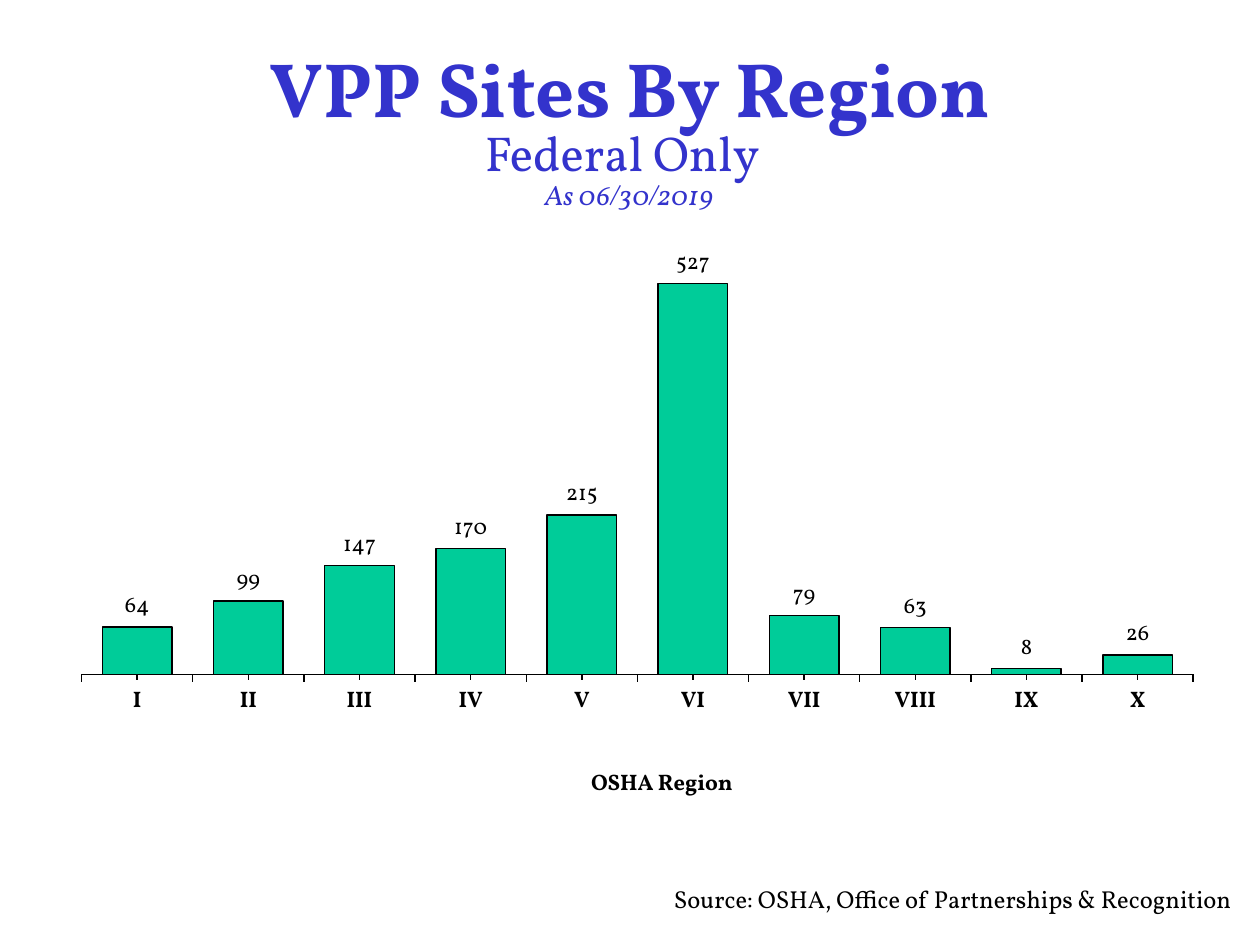
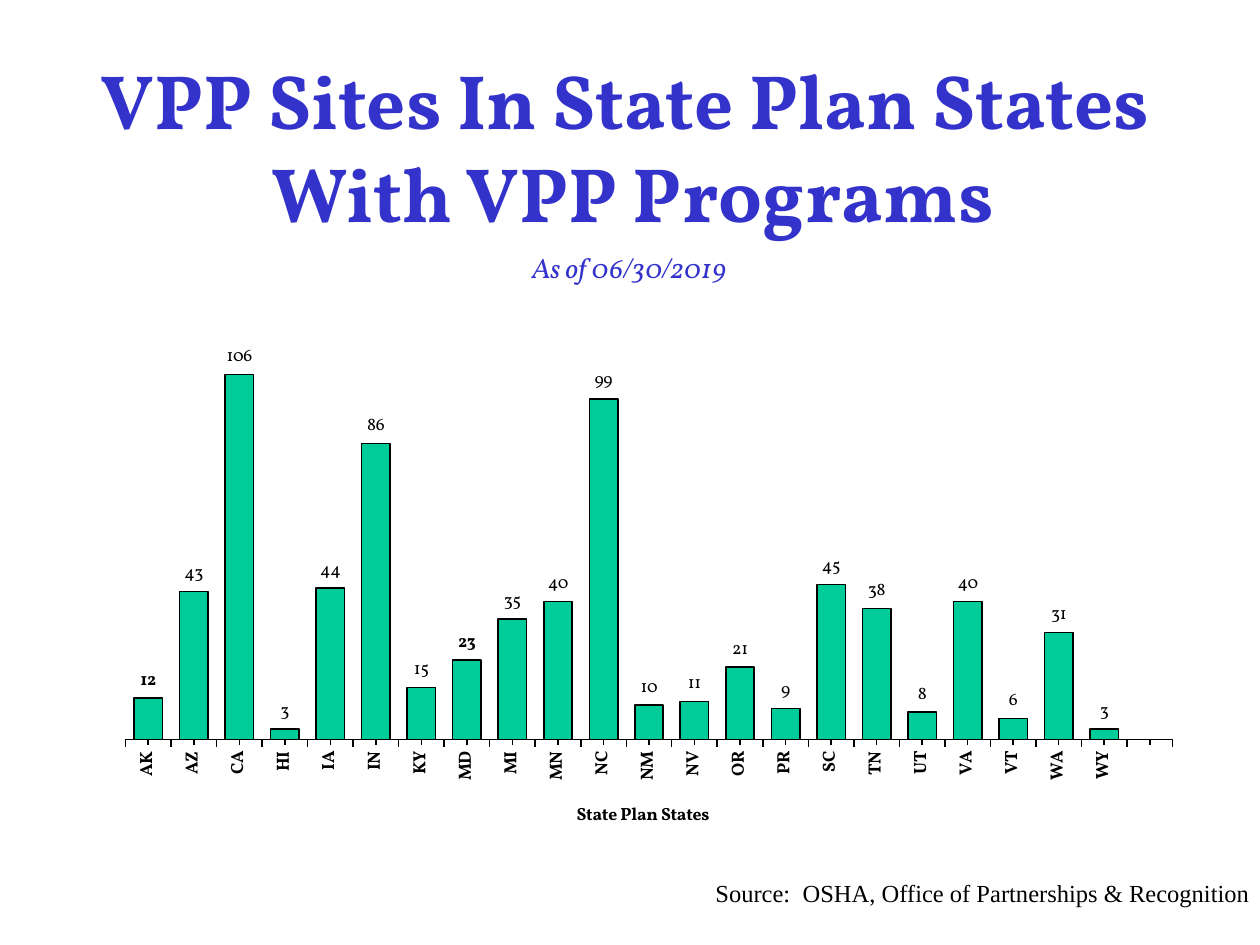
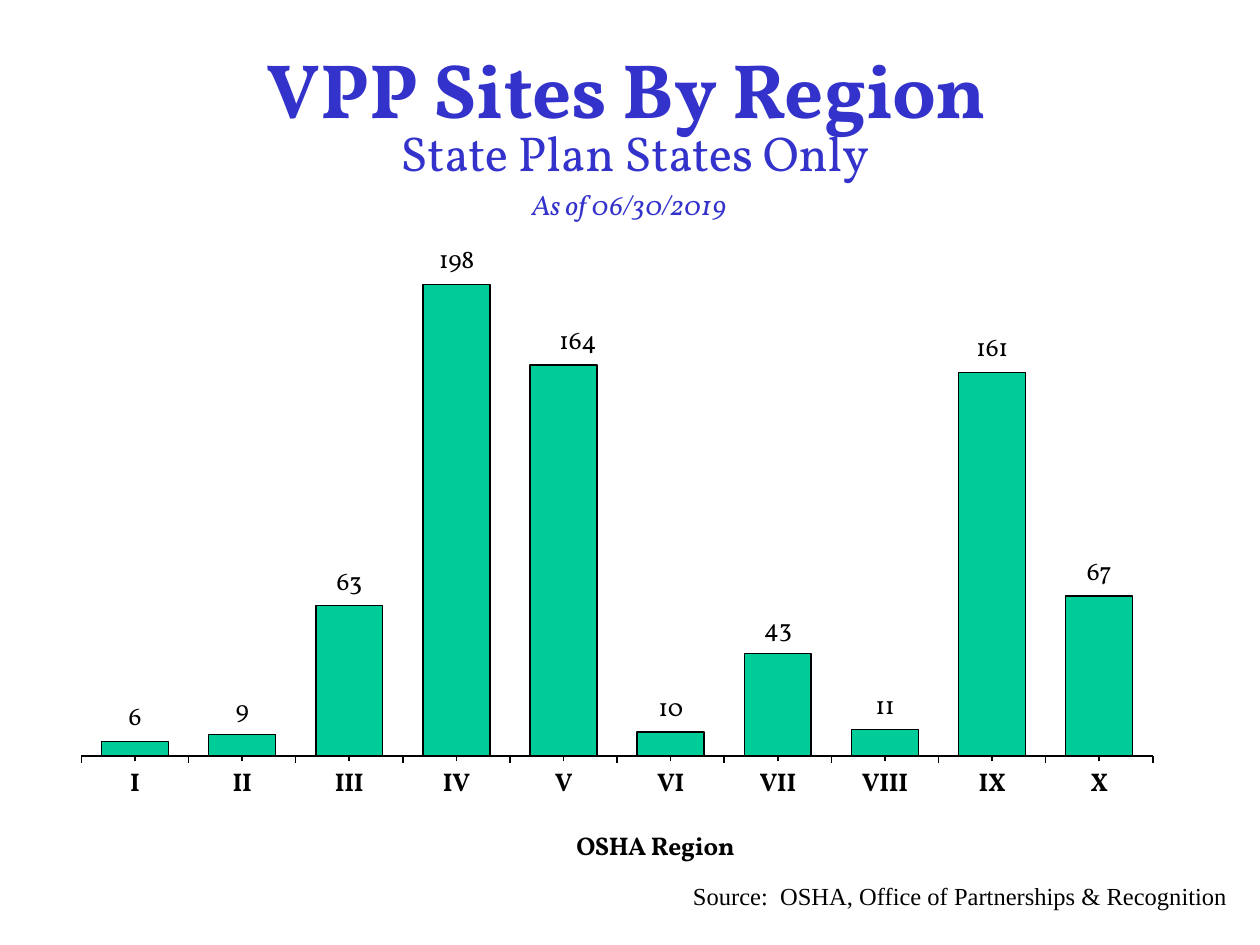
from dataclasses import dataclass, field

from lxml import etree
from pptx import Presentation
from pptx import util as u
from pptx.chart.data import CategoryChartData
from pptx.dml.color import RGBColor
from pptx.enum import chart as charts, text
from pptx.oxml.ns import qn

WIDTH, HEIGHT = u.Inches(10), u.Inches(7.5)
COLUMNS, ROWS = 40, 30


@dataclass(frozen=True)
class Theme:
    heading: RGBColor = RGBColor(0x33, 0x33, 0xCC)
    ink: RGBColor = RGBColor(0, 0, 0)
    bar: RGBColor = RGBColor(0x00, 0xCC, 0x99)
    paper: RGBColor = RGBColor(0xFF, 0xFF, 0xFF)
    face: str = "Vollkorn"
    plain_face: str = "Times New Roman"
    title_size: float = 44
    subtitle_size: float = 28
    date_size: float = 16
    source_size: float = 14


THEME = Theme()


@dataclass(frozen=True)
class Box:
    """A region in columns and rows of the slide grid."""
    left: float
    top: float
    width: float
    height: float

    def inner(self, left, top, width, height):
        return Box(self.left + left, self.top + top, width, height)

    def lengths(self):
        column, row = WIDTH / COLUMNS, HEIGHT / ROWS
        return (u.Emu(round(self.left * column)), u.Emu(round(self.top * row)),
                u.Emu(round(self.width * column)), u.Emu(round(self.height * row)))


@dataclass(frozen=True)
class BarData:
    """Bar values with the chart's own settings; layouts are percentages."""
    title: str
    values: dict
    maximum: float
    size: float
    line: float
    plot: tuple
    title_at: tuple
    upright: bool = False
    bold_labels: tuple = ()
    label_shifts: dict = field(default_factory=dict)


def style(font, size, color, face=THEME.face, bold=False, italic=False):
    font.size, font.name = u.Pt(size), face
    font.bold, font.italic = bold, italic
    font.color.rgb = color


def add_text(page, box, lines, size, color, face=THEME.face, bold=False, italic=False,
             align=text.PP_ALIGN.LEFT, anchor=text.MSO_ANCHOR.TOP, inset=0, wrap=True):
    frame = page.shapes.add_textbox(*box.lengths()).text_frame
    frame.word_wrap = wrap
    if not wrap:
        frame.auto_size = text.MSO_AUTO_SIZE.SHAPE_TO_FIT_TEXT
    frame.vertical_anchor = anchor
    frame.margin_left = frame.margin_right = u.Inches(inset)
    frame.margin_top = frame.margin_bottom = u.Inches(inset / 2)
    for number, line in enumerate(lines):
        para = frame.add_paragraph() if number else frame.paragraphs[0]
        para.alignment = align
        span = para.add_run()
        span.text = line
        style(span.font, size, color, face, bold, italic)


def add_heading(page, box, lines, date, date_top, subtitle="", subtitle_box=None):
    """Title across the box; date and subtitle placed from its top."""
    add_text(page, box, lines, THEME.title_size, THEME.heading, bold=True,
             align=text.PP_ALIGN.CENTER)
    if subtitle:
        add_text(page, box.inner(*subtitle_box), [subtitle], THEME.subtitle_size,
                 THEME.heading, inset=0.1, wrap=False)
    date_left = 14.32 - box.left
    add_text(page, box.inner(date_left, date_top, 11.32, 3), [date], THEME.date_size,
             THEME.heading, italic=True, align=text.PP_ALIGN.CENTER,
             anchor=text.MSO_ANCHOR.MIDDLE, inset=0.1)


def add_source(page, box, line, **options):
    add_text(page, box, [line], THEME.source_size, THEME.ink, **options)


def set_layout(owner, index, settings):
    """Give a chart part a manual layout as its child at index."""
    for old in owner.findall(qn("c:layout")):
        owner.remove(old)
    layout = etree.Element(qn("c:layout"))
    manual = etree.SubElement(layout, qn("c:manualLayout"))
    for tag, value in settings.items():
        etree.SubElement(manual, qn(f"c:{tag}")).set("val", str(value))
    owner.insert(index, layout)


def shares(names, percentages):
    return {name: round(value / 100, 4) for name, value in zip(names, percentages)}


def format_axes(chart, bars):
    values = chart.value_axis
    values.minimum_scale, values.maximum_scale = 0, bars.maximum
    values.has_major_gridlines = False
    values.visible = False

    regions = chart.category_axis
    regions.major_tick_mark = regions.minor_tick_mark = charts.XL_TICK_MARK.OUTSIDE
    regions.tick_label_position = charts.XL_TICK_LABEL_POSITION.LOW
    regions.format.line.color.rgb = THEME.ink
    regions.format.line.width = u.Pt(bars.line)
    style(regions.tick_labels.font, bars.size, THEME.ink, bold=True)
    if bars.upright:
        body = regions._element.find(qn("c:txPr")).find(qn("a:bodyPr"))
        body.set("rot", "-5400000")
        body.set("vert", "horz")

    span = regions.axis_title.text_frame.paragraphs[0].add_run()
    span.text = bars.title
    style(span.font, bars.size, THEME.ink, bold=True)
    set_layout(regions.axis_title._element, 1,
               {"xMode": "edge", "yMode": "edge", **shares("xy", bars.title_at)})


def format_bars(plot, bars):
    plot.gap_width = 60
    plot.vary_by_categories = False
    series = plot.series[0]
    series.format.fill.solid()
    series.format.fill.fore_color.rgb = THEME.bar
    series.format.line.color.rgb = THEME.ink
    series.format.line.width = u.Pt(bars.line)

    labels = series.data_labels
    labels.show_value = True
    labels.position = charts.XL_LABEL_POSITION.OUTSIDE_END
    style(labels.font, bars.size, THEME.ink)
    for index in {*bars.bold_labels, *bars.label_shifts}:
        label = series.points[index].data_label
        style(label.font, bars.size, THEME.ink, bold=index in bars.bold_labels)
        label.position = charts.XL_LABEL_POSITION.OUTSIDE_END
        if index in bars.label_shifts:
            set_layout(label._dLbl, 1, shares("xy", (bars.label_shifts[index], 0)))


def add_bar_chart(page, box, bars):
    data = CategoryChartData()
    data.categories = list(bars.values)
    data.add_series("Series 1", list(bars.values.values()))
    chart = page.shapes.add_chart(charts.XL_CHART_TYPE.COLUMN_CLUSTERED,
                                  *box.lengths(), data).chart
    chart.has_legend = chart.has_title = False
    style(chart.font, bars.size, THEME.ink)
    format_axes(chart, bars)
    format_bars(chart.plots[0], bars)
    set_layout(chart._chartSpace.chart.plotArea, 0,
               {"layoutTarget": "inner", "xMode": "edge", "yMode": "edge",
                **shares("xywh", bars.plot)})


def add_page(deck):
    page = deck.slides.add_slide(deck.slide_layouts[6])
    page.background.fill.solid()
    page.background.fill.fore_color.rgb = THEME.paper
    return page


REGIONS = ("I", "II", "III", "IV", "V", "VI", "VII", "VIII", "IX", "X")
SPACED_SOURCE = "Source:  OSHA, Office of Partnerships & Recognition"

FEDERAL = BarData(
    "OSHA Region", dict(zip(REGIONS, (64, 99, 147, 170, 215, 527, 79, 63, 8, 26))),
    maximum=600, size=12.8, line=0.8,
    plot=(2.8, 12.1, 95.9, 61.6), title_at=(46.4, 86))

STATES = BarData(
    "State Plan States ",
    {"AK": 12, "AZ": 43, "CA": 106, "HI": 3, "IA": 44, "IN": 86, "KY": 15, "MD": 23,
     "MI": 35, "MN": 40, "NC": 99, "NM": 10, "NV": 11, "OR": 21, "PR": 9, "SC": 45,
     "TN": 38, "UT": 8, "VA": 40, "VT": 6, "WA": 31, "WY": 3, "": None},
    maximum=120, size=10.1, line=0.88,
    plot=(3.2, 11, 96.3, 67.7), title_at=(44.4, 88.6),
    upright=True, bold_labels=(0, 7))

STATE_REGIONS = BarData(
    "OSHA Region", dict(zip(REGIONS, (6, 9, 63, 198, 164, 10, 43, 11, 161, 67))),
    maximum=250, size=14.6, line=0.88,
    plot=(0, 10.5, 97.7, 73.6), title_at=(44.7, 92.6), label_shifts={4: 1.3})


def federal_page(deck):
    page = add_page(deck)
    add_heading(page, Box(-1, 1.28, 42, 3.36), ["VPP Sites By Region"],
                "As 06/30/2019", 3.4, "Federal Only", (16, 2.4, 9.52, 2.28))
    add_bar_chart(page, Box(1.56, 4.52, 36.8, 22.92), FEDERAL)
    add_source(page, Box(21, 27.88, 18.56, 1.36),
               "Source: OSHA, Office of Partnerships & Recognition", inset=0.1, wrap=False)


def states_page(deck):
    page = add_page(deck)
    add_heading(page, Box(1, 1.68, 38.2, 9.96),
                ["VPP Sites In State Plan States ", "With VPP Programs"],
                "As of 06/30/2019", 5.32)
    add_bar_chart(page, Box(2.88, 8.24, 34.52, 19.36), STATES)
    add_source(page, Box(21.32, 27.88, 18.36, 2.04), SPACED_SOURCE,
               face=THEME.plain_face, align=text.PP_ALIGN.RIGHT)


def state_regions_page(deck):
    page = add_page(deck)
    add_heading(page, Box(0.8, 1.32, 38.2, 2.96), ["VPP Sites By Region"],
                "As of 06/30/2019", 3.68, "State Plan States Only", (11.52, 2.36, 15.96, 2.24))
    add_bar_chart(page, Box(2.56, 2.4, 34.84, 25.68), STATE_REGIONS)
    add_source(page, Box(22, 27.96, 18, 0.88), SPACED_SOURCE, face=THEME.plain_face)


def main():
    deck = Presentation()
    deck.slide_width, deck.slide_height = WIDTH, HEIGHT
    for build_page in (federal_page, states_page, state_regions_page):
        build_page(deck)
    deck.save("out.pptx")


if __name__ == "__main__":
    main()
